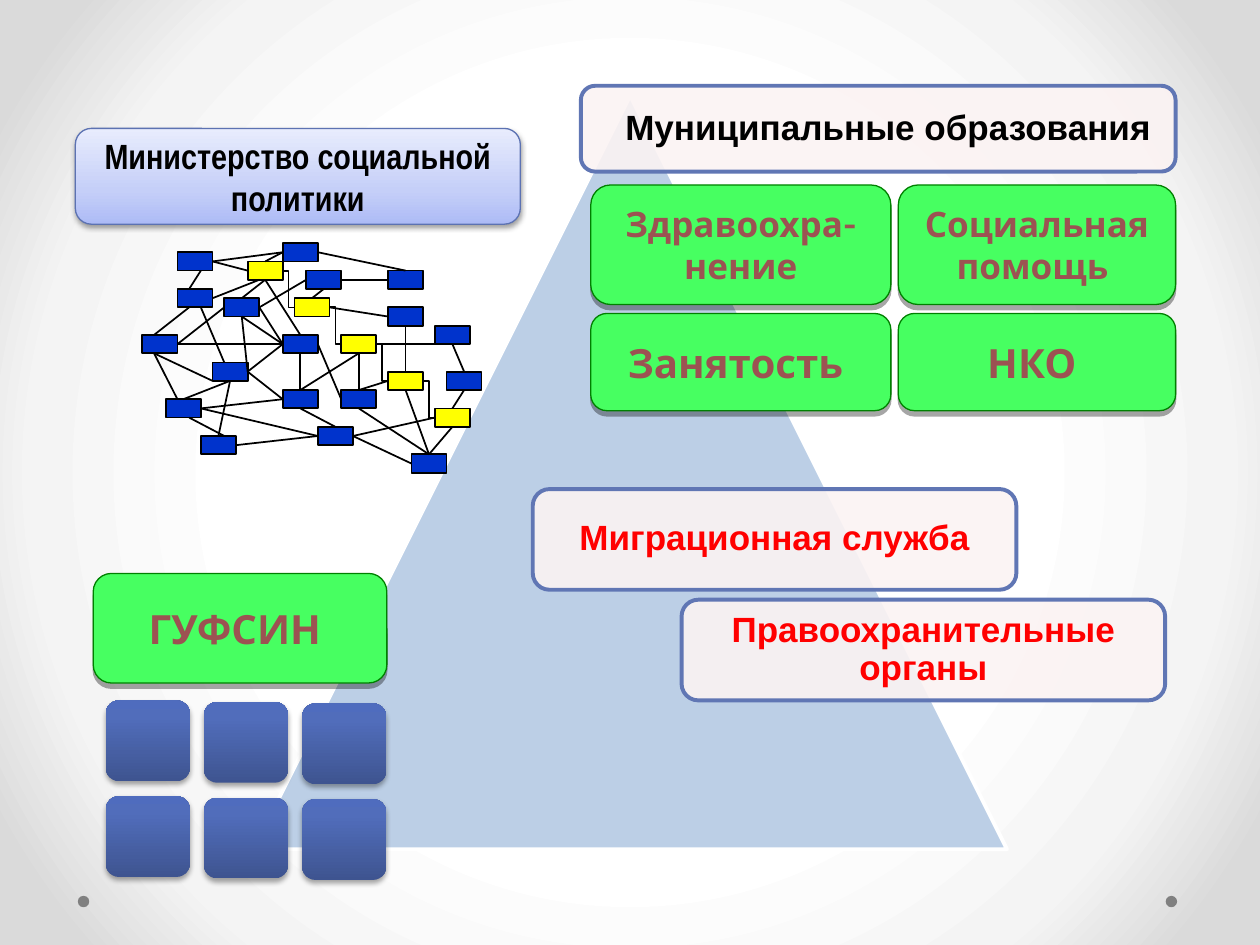
from lxml import etree
from pptx import Presentation
from pptx import util as u
from pptx.dml.color import RGBColor
from pptx.enum import shapes as sh, text as tx
from pptx.oxml import parse_xml
from pptx.oxml.ns import qn

NS = 'xmlns:a="http://schemas.openxmlformats.org/drawingml/2006/main"'
HUE = {
    "dot": "808080", "peak": "BCCFE6", "white": "FFFFFF", "black": "000000",
    "blue": "0033CC", "gold": "FFFF00", "green": "47FF61", "rim": "008000",
    "rust": "9C5252", "card": "FBF3F3", "edge": "6076B4", "red": "FF0000",
    "trim": "5C72B2",
}
BACK = [(50, "FFFFFF"), (76, "F4F4F4"), (92, "DADADA")]
TILE = [(0, "3E5490"), (80, "516DBB"), (100, "4F6CBE")]
HEAD = [(0, "ADBBF6"), (35, "C5CFF8"), (100, "E8ECFD")]
KIND = sh.MSO_SHAPE

# Network nodes as (column, row) on a 29 by 25 grid; each is 3 by 2 cells
BLUE = [(7, 6), (15, 20), (23, 23), (6, 13), (12, 0), (3, 5), (3, 1), (5, 21),
        (2, 17), (0, 10), (14, 3), (21, 3), (12, 10), (26, 14), (12, 16),
        (25, 9), (21, 7), (17, 16)]
GOLD = [(9, 2), (13, 6), (17, 10), (21, 14), (25, 18)]
LINKS = [
    (4, 5, 5, 3), (6, 6, 10, 4), (4, 7, 1, 10), (1, 12, 6, 15), (1, 12, 3, 17),
    (4, 19, 7, 21), (5, 18, 12, 17), (5, 7, 7, 13), (10, 7, 12, 11),
    (9, 14, 12, 17), (13.5, 12, 13.5, 16), (8, 22, 15, 21), (5, 18, 15, 21),
    (13.5, 18, 16.5, 20), (7.5, 15, 3.5, 17), (6.5, 21, 7.5, 15),
    (15, 11, 17, 17), (12, 11, 8.5, 8), (3, 11, 7, 7), (8.5, 6, 10.5, 4),
    (8.5, 8, 9, 14), (13.5, 16, 18.5, 12), (18.5, 12, 18.5, 16),
    (22.5, 9, 22.5, 14), (15.5, 5, 14.5, 6), (10.5, 4, 13.5, 10),
    (6, 2, 12, 1), (21, 4, 17, 4), (25, 11, 20, 11), (21, 8, 16, 7),
    (26.5, 11, 27.5, 14), (26.5, 18, 27.5, 16), (24.5, 23, 18.5, 18),
    (26.5, 20, 24.5, 23), (18.5, 16, 21, 15), (14, 4, 10, 7),
    (15, 1, 22.5, 3), (23, 24, 18, 21), (22.5, 16, 24.5, 23),
    (18, 21, 25, 19), (9, 14, 12, 11), (3, 11, 12, 11), (6, 2, 9, 3),
    (12, 1, 10.5, 2),
]


def rgb(name):
    return RGBColor.from_string(HUE[name])


def grad(stops, way):
    marks = "".join(f'<a:gs pos="{at * 1000}"><a:srgbClr val="{hue}"/></a:gs>'
                    for at, hue in stops)
    return parse_xml(f'<a:gradFill {NS} rotWithShape="1"><a:gsLst>{marks}'
                     f'</a:gsLst>{way}</a:gradFill>')


def shade(shape, blur, dist, alpha):
    """Cast a soft shadow straight down."""
    shape._element.spPr.append(parse_xml(
        f'<a:effectLst {NS}><a:outerShdw blurRad="{u.Pt(blur)}" '
        f'dist="{u.Pt(dist)}" dir="5400000" rotWithShape="0">'
        f'<a:srgbClr val="000000"><a:alpha val="{alpha * 1000}"/></a:srgbClr>'
        '</a:outerShdw></a:effectLst>'))


def draw(slide, kind, box, fill, line=None, wide=1, cast=None):
    """Add a shape; fill is a colour name or a list of gradient stops."""
    part = slide.shapes.add_shape(kind, *map(u.Cm, box))
    part.fill.solid()
    if isinstance(fill, str):
        part.fill.fore_color.rgb = rgb(fill)
    else:
        old = part._element.spPr.find(qn("a:solidFill"))
        old.getparent().replace(old, grad(fill, '<a:lin ang="16200000" scaled="0"/>'))
    if line:
        part.line.color.rgb = rgb(line)
        part.line.width = u.Pt(wide)
    else:
        part.line.fill.background()
    if cast:
        shade(part, *cast)
    else:
        part.shadow.inherit = False
    return part


def write(part, words, size, font, hue):
    frame = part.text_frame
    frame.text = words
    frame.word_wrap = True
    frame.vertical_anchor = tx.MSO_ANCHOR.MIDDLE
    para = frame.paragraphs[0]
    para.alignment = tx.PP_ALIGN.CENTER
    face = para.runs[0].font
    face.size, face.name, face.bold = u.Pt(size), font, True
    face.color.rgb = rgb(hue)
    return para


def back(slide):
    slide.background.fill.solid()
    node = slide._element.xpath(".//p:bgPr")[0]
    node.replace(node[0], grad(BACK, '<a:path path="circle"><a:fillToRect '
                               'l="50000" t="50000" r="50000" b="50000"/></a:path>'))
    for x in (23.5, 1.57):
        draw(slide, KIND.OVAL, (x, 18.06, 0.23, 0.23), "dot")


def net(slide, box):
    left, top, wide, high = box
    dx, dy = wide / 29, high / 25
    sites = {}

    def spot(x, y):
        return left + x * dx, top + y * dy

    def wire(kind, x1, y1, x2, y2):
        ends = map(u.Cm, spot(x1, y1) + spot(x2, y2))
        link = slide.shapes.add_connector(kind, *ends)
        link.line.color.rgb = rgb("black")
        link.line.width = u.Pt(1)
        etree.SubElement(link._element.spPr, qn("a:effectLst"))
        return link

    # Nodes, with the middle of each side kept for joining
    for hue, cells in (("blue", BLUE), ("gold", GOLD)):
        for x, y in cells:
            node = draw(slide, KIND.FLOWCHART_PROCESS,
                        (*spot(x, y), 3 * dx, 2 * dy), hue, "black")
            mids = [(x + 1.5, y), (x, y + 1), (x + 1.5, y + 2), (x + 3, y + 1)]
            for i, mid in enumerate(mids):
                sites[mid] = node, i

    # Chain of elbows through the gold nodes
    for (x1, y1), (x2, y2) in zip(GOLD, GOLD[1:]):
        wire(sh.MSO_CONNECTOR.ELBOW, x1 + 3, y1 + 1, x2, y2 + 1)

    # Straight links
    for x1, y1, x2, y2 in LINKS:
        link = wire(sh.MSO_CONNECTOR.STRAIGHT, x1, y1, x2, y2)
        if (x1, y1) in sites:
            link.begin_connect(*sites[x1, y1])
        if (x2, y2) in sites:
            link.end_connect(*sites[x2, y2])


def green(slide, box, words, size):
    part = draw(slide, KIND.ROUNDED_RECTANGLE, box, "green", "rim", 0.75, (0, 3, 35))
    write(part, words, size, "Karla", "rust")


def tiles(slide, box):
    left, top, wide, high = box
    for row in range(2):
        for col in range(3):
            spot = (left + col * 1.98, top + row * 1.93 + col * 0.03, wide, high)
            draw(slide, KIND.ROUNDED_RECTANGLE, spot, TILE, cast=(3.1, 1.8, 35))


def group(slide, box):
    """Two by two service boxes."""
    left, top, wide, high = box
    cols = [(left, 6.05), (left + 6.2, wide - 6.2)]
    rows = [(top, 2.41, 20, ("Здравоохра-нение", "Социальная помощь ")),
            (top + 2.59, high - 2.59, 23, ("Занятость ", "НКО "))]
    for y, h, size, names in rows:
        for (x, w), words in zip(cols, names):
            green(slide, (x, y, w, h), words, size)


def card(slide, box, words, hue, pad=(0.2, 0.2)):
    left, top, wide, high = box
    part = draw(slide, KIND.ROUNDED_RECTANGLE, box, "card", "edge", 2.25)
    tone = part._element.spPr.find(qn("a:solidFill"))[0]
    etree.SubElement(tone, qn("a:alpha")).set("val", "90000")
    area = (left + pad[0], top + 0.1, wide - sum(pad), high - 0.2)
    label = slide.shapes.add_textbox(*map(u.Cm, area))
    write(label, words, 20, "Arial", hue).line_spacing = 0.9
    frame = label.text_frame
    frame.margin_left = frame.margin_right = u.Cm(0.2)
    frame.margin_top = frame.margin_bottom = u.Cm(0.2)


def main():
    deck = Presentation()
    deck.slide_width, deck.slide_height = u.Cm(25.4), u.Cm(19.05)
    slide = deck.slides.add_slide(deck.slide_layouts[6])
    back(slide)
    draw(slide, KIND.ISOSCELES_TRIANGLE, (5.11, 1.93, 15.19, 15.19),
         "peak", "white", 2.25)
    net(slide, (2.87, 4.9, 6.84, 4.63))
    green(slide, (1.88, 11.56, 5.92, 2.21), "ГУФСИН ", 23)
    tiles(slide, (2.13, 14.12, 1.7, 1.63))
    group(slide, (11.91, 3.73, 11.79, 4.55))
    card(slide, (11.71, 1.73, 11.99, 1.73), "Муниципальные образования",
         "black", (0.58, 0.18))
    card(slide, (10.74, 9.86, 9.75, 2.03), "Миграционная служба", "red")
    card(slide, (13.74, 12.09, 9.75, 2.03), "Правоохранительные органы", "red")
    head = draw(slide, KIND.FLOWCHART_ALTERNATE_PROCESS, (1.52, 2.59, 8.97, 1.93),
                HEAD, "trim", 0.75, (3.1, 1.6, 38))
    write(head, "Министерство социальной политики", 20, "Arial Narrow", "black")
    deck.save("out.pptx")


if __name__ == "__main__":
    main()
